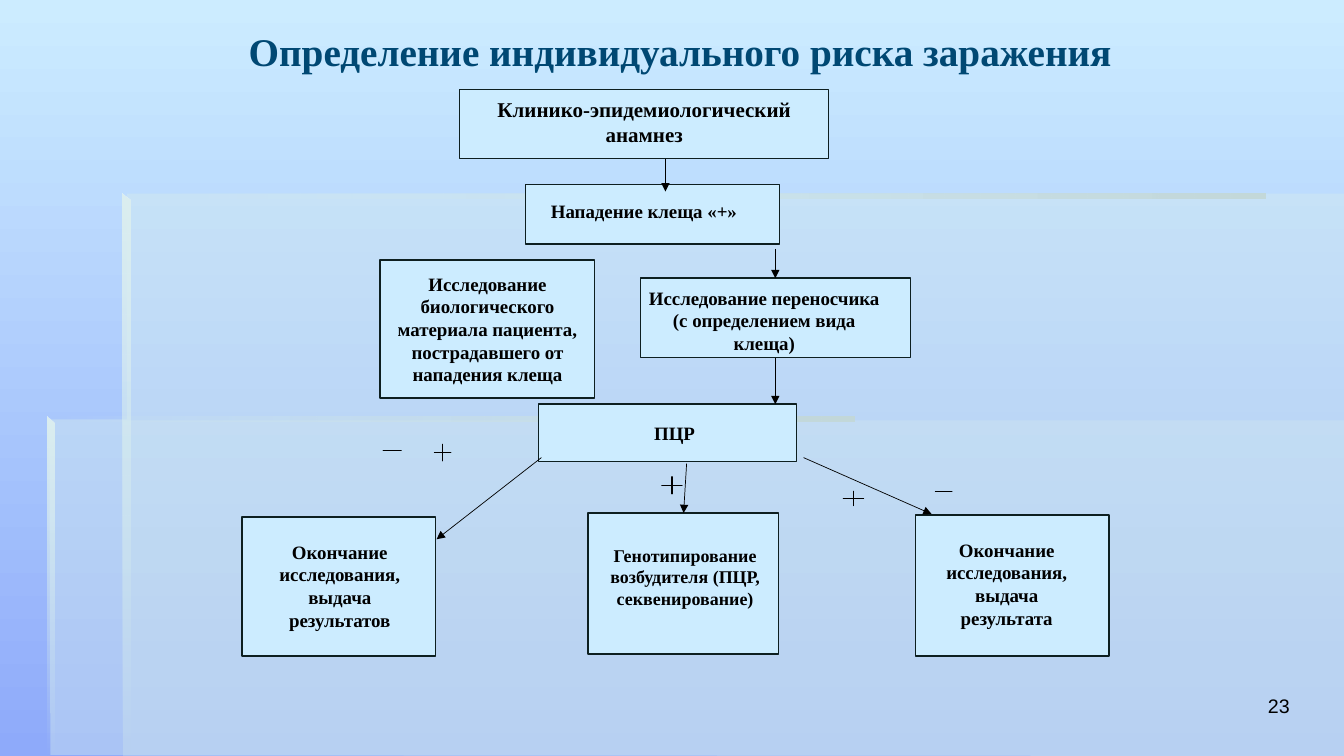
from lxml import etree
from pptx import Presentation
from pptx.dml.color import RGBColor
from pptx.enum.shapes import MSO_CONNECTOR, MSO_SHAPE
from pptx.enum.text import MSO_ANCHOR, PP_ALIGN
from pptx.oxml.ns import qn
from pptx.util import Inches, Pt

RECTANGLE, PLUS, MINUS = MSO_SHAPE.RECTANGLE, MSO_SHAPE.MATH_PLUS, MSO_SHAPE.MATH_MINUS
STRAIGHT = MSO_CONNECTOR.STRAIGHT
TOP, MIDDLE = MSO_ANCHOR.TOP, MSO_ANCHOR.MIDDLE
LEFT, CENTER, RIGHT = PP_ALIGN.LEFT, PP_ALIGN.CENTER, PP_ALIGN.RIGHT
SERIF, SANS = "Times New Roman", "Arial"
TITLE_ONLY = 5

COLORS = {
    "sky": "CCECFF", "blue": "8EAAFA", "panel": "D6EDEE", "edge": "C4D9DA",
    "glow": "DCEFF0", "border": "0D1F20", "title": "004873", "black": "000000",
}

STEPS = [
    ((4.56, 0.89, 3.66, 0.68), (4.56, 0.91, 3.66, 0.61),
     "Клинико-эпидемиологический анамнез", {"size": 15}),
    ((5.21, 1.83, 2.52, 0.59), (5.1, 1.93, 2.62, 0.33), "Нападение клеща «+» ", {}),
    ((5.34, 4.01, 2.56, 0.57), (6.39, 4.13, 0.65, 0.33), "ПЦР", {"align": LEFT}),
    ((6.35, 2.76, 2.68, 0.79), (6.3, 2.79, 2.56, 0.78),
     "Исследование переносчика\n(с определением вида клеща)", {}),
    ((2.4, 5.13, 1.92, 1.38), (2.66, 5.31, 1.42, 1.01),
     "Окончание исследования, выдача результатов", {}),
    ((5.83, 5.09, 1.89, 1.4), (5.9, 5.35, 1.79, 0.76),
     "Генотипирование возбудителя (ПЦР, секвенирование)", {"size": 12.8}),
    ((9.08, 5.11, 1.92, 1.4), (9.25, 5.29, 1.47, 1.01),
     "Окончание исследования, выдача результата", {}),
]
PATIENT_BOX = (3.77, 2.58, 2.13, 1.37)
PATIENT_TEXT = "Исследование биологического материала пациента, пострадавшего от нападения клеща"
ARROWS = [
    (6.6, 1.58, 6.6, 1.9), (7.69, 2.47, 7.69, 2.76), (7.69, 3.55, 7.69, 4.01),
    (5.37, 4.54, 4.33, 5.35), (7.97, 4.54, 9.24, 5.1), (6.81, 4.6, 6.78, 5.09),
]
SIGNS = [
    (PLUS, (4.28, 4.38, 0.22, 0.22)), (MINUS, (3.77, 4.37, 0.24, 0.2)),
    (PLUS, (6.53, 4.7, 0.27, 0.23)), (MINUS, (9.25, 4.75, 0.22, 0.25)),
    (PLUS, (8.33, 4.85, 0.27, 0.19)),
]


def color(name):
    """Return the named colour of the palette."""
    return RGBColor.from_string(COLORS[name])


def inches(values):
    """Convert a sequence of numbers to lengths."""
    return [Inches(value) for value in values]


def write(shape, text, size=13.5, font=SERIF, ink="black", bold=True,
          align=CENTER, anchor=TOP):
    """Fill a shape with formatted text, one paragraph per line."""
    frame = shape.text_frame
    frame.word_wrap = True
    frame.vertical_anchor = anchor
    frame.text = text
    for paragraph in frame.paragraphs:
        paragraph.alignment = align
        style = paragraph.runs[0].font
        style.size, style.name, style.bold = Pt(size), font, bold
        style.color.rgb = color(ink)


def add_label(slide, box, text, **text_format):
    """Add a text box."""
    write(slide.shapes.add_textbox(*inches(box)), text, **text_format)


def add_preset(slide, kind, box, line):
    """Add a pale preset shape with a thin outline."""
    shape = slide.shapes.add_shape(kind, *inches(box))
    shape.shadow.inherit = False
    shape.fill.solid()
    shape.fill.fore_color.rgb = color("sky")
    shape.line.color.rgb = color(line)
    shape.line.width = Pt(1)
    return shape


def set_gradient(fill, first, last, angle):
    """Apply a two-colour linear gradient."""
    fill.gradient()
    fill.gradient_angle = angle
    for stop, name in zip(fill.gradient_stops, (first, last)):
        stop.color.rgb = color(name)


def set_alpha(shape, index, percent):
    """Set the opacity of one fill colour of a shape."""
    fill_color = list(shape._element.spPr.iter(qn("a:srgbClr")))[index]
    etree.SubElement(fill_color, qn("a:alpha")).set("val", str(percent * 1000))


def add_outline(slide, points):
    """Add a closed freeform without outline or shadow."""
    corners = [inches(point) for point in points]
    builder = slide.shapes.build_freeform(*corners[0])
    builder.add_line_segments(corners[1:], close=True)
    shape = builder.convert_to_shape()
    shape.shadow.inherit = False
    shape.line.fill.background()
    return shape


def add_panel(slide, points, opacity):
    """Add a translucent backdrop panel."""
    panel = add_outline(slide, points)
    panel.fill.solid()
    panel.fill.fore_color.rgb = color("panel")
    set_alpha(panel, 0, opacity)


def add_top_edge(slide, left, top, width):
    """Add a panel's upper edge, fading in from the left."""
    right, bottom = left + width, top + 0.05
    edge = add_outline(slide, [(left, top), (left, bottom), (right, bottom), (right, top)])
    set_gradient(edge.fill, "panel", "edge", 0)
    set_alpha(edge, 0, 0)


def add_side_edge(slide, left, top, height):
    """Add a panel's bevelled left edge, fading out downwards."""
    right, bottom = left + 0.07, top + height
    edge = add_outline(slide, [(left, top), (left, bottom), (right, bottom), (right, top + 0.07)])
    set_gradient(edge.fill, "glow", "panel", 270)
    set_alpha(edge, 1, 0)


def add_backdrop(slide):
    """Draw the background gradient and the layered panels."""
    set_gradient(slide.background.fill, "sky", "blue", 270)
    add_panel(slide, [(1.26, 1.92), (1.26, 4.16), (0.49, 4.16), (0.5, 7.49),
                      (13.33, 7.5), (13.33, 1.92)], 40)
    add_panel(slide, [(1.22, 4.17), (1.22, 7.5), (13.33, 7.5), (13.33, 4.17)], 30)
    add_top_edge(slide, 0.47, 4.13, 8)
    add_top_edge(slide, 1.22, 1.92, 11.33)
    add_side_edge(slide, 0.47, 4.13, 3.4)
    add_side_edge(slide, 1.22, 1.92, 5.6)


def add_arrow(slide, ends):
    """Add a thin arrow."""
    arrow = slide.shapes.add_connector(STRAIGHT, *inches(ends))
    arrow.line.color.rgb = color("black")
    arrow.line.width = Pt(0.5)
    properties = arrow._element.spPr
    etree.SubElement(properties.find(qn("a:ln")), qn("a:tailEnd")).set("type", "triangle")
    etree.SubElement(properties, qn("a:effectLst"))


def add_title(slide, box, text):
    """Place and format the title."""
    title = slide.shapes.title
    title.left, title.top, title.width, title.height = inches(box)
    write(title, text, size=28, ink="title")


def add_flowchart(slide):
    """Draw the steps, arrows and result signs."""
    for box, label_box, text, text_format in STEPS:
        add_preset(slide, RECTANGLE, box, "border")
        add_label(slide, label_box, text, **text_format)
    patient = add_preset(slide, RECTANGLE, PATIENT_BOX, "border")
    write(patient, PATIENT_TEXT, anchor=MIDDLE)
    for ends in ARROWS:
        add_arrow(slide, ends)
    for kind, box in SIGNS:
        add_preset(slide, kind, box, "black").adjustments[0] = 0


def main():
    """Build and save the presentation."""
    presentation = Presentation()
    presentation.slide_width, presentation.slide_height = inches((13.33, 7.5))
    slide = presentation.slides.add_slide(presentation.slide_layouts[TITLE_ONLY])
    add_backdrop(slide)
    add_title(slide, (2.02, 0.22, 9.45, 0.57), "Определение индивидуального риска заражения")
    add_flowchart(slide)
    add_label(slide, (10.12, 6.83, 2.77, 0.52), "23", size=14, font=SANS,
              bold=False, align=RIGHT)
    presentation.save("out.pptx")


if __name__ == "__main__":
    main()
